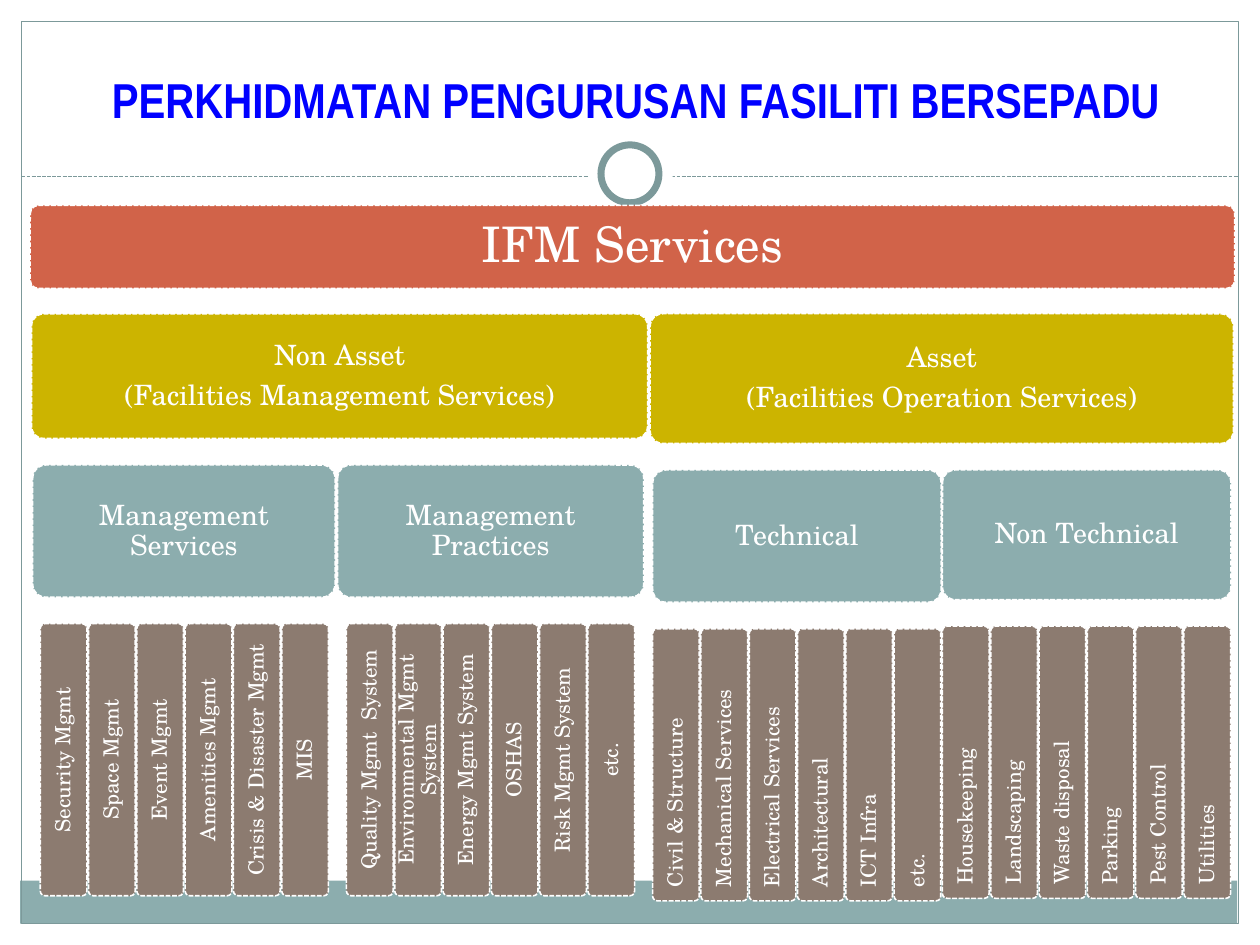
from pptx import Presentation
from pptx.dml.color import RGBColor
from pptx.enum.dml import MSO_LINE
from pptx.enum.shapes import MSO_CONNECTOR, MSO_SHAPE as SHAPE
from pptx.enum.text import MSO_ANCHOR as ANCHOR, PP_ALIGN as ALIGN
from pptx.util import Inches, Pt
from lxml import etree

COLORS = {"white": "FFFFFF", "teal": "8CADAE", "frame": "7C999A", "title": "0000FF",
          "root": "D16349", "branch": "CCB400", "leaf": "8C7B70"}
RGB = {name: RGBColor.from_string(value) for name, value in COLORS.items()}

prs = Presentation()
prs.slide_width, prs.slide_height = Inches(10), Inches(7.5)
s = prs.slides.add_slide(prs.slide_layouts[5])


def add_shape(kind, box, fill=None, line=None, width=0.75):
    sp = s.shapes.add_shape(kind, *[Inches(v) for v in box])
    sp.shadow.inherit = False
    if fill:
        sp.fill.solid()
        sp.fill.fore_color.rgb = RGB[fill]
    else:
        sp.fill.background()
    if line:
        sp.line.color.rgb = RGB[line]
        sp.line.width = Pt(width)
    else:
        sp.line.fill.background()
    return sp


def add_box(box, fill, lines, size, inset, align=ALIGN.CENTER, vertical=False):
    sp = add_shape(SHAPE.ROUNDED_RECTANGLE, box, fill, "white", 0.9)
    sp.adjustments[0] = 0.1
    sp.line.dash_style = MSO_LINE.SQUARE_DOT
    tf = sp.text_frame
    tf.word_wrap = True
    tf.vertical_anchor = ANCHOR.MIDDLE
    for side in ("left", "top", "right", "bottom"):
        setattr(tf, f"margin_{side}", Inches(inset))
    if vertical:
        tf._txBody.bodyPr.set("vert", "vert270")
    for i, line in enumerate(lines):
        p = tf.paragraphs[0] if i == 0 else tf.add_paragraph()
        for name, value in {"alignment": align, "line_spacing": 0.9,
                            "space_after": Pt(0.35 * size)}.items():
            setattr(p, name, value)
        r = p.add_run()
        r.text = line
        for name, value in {"name": "TeX Gyre Schola", "size": Pt(size)}.items():
            setattr(r.font, name, value)
        r.font.color.rgb = RGB["white"]


add_shape(SHAPE.RECTANGLE, (0.16, 6.99, 9.66, 0.34), "teal")
add_shape(SHAPE.RECTANGLE, (0.17, 0.17, 9.66, 7.16), line="frame")
rule = s.shapes.add_connector(MSO_CONNECTOR.STRAIGHT, Inches(0.17), Inches(1.4),
                              Inches(9.83), Inches(1.4))
rule.line.color.rgb = RGB["frame"]
rule.line.width = Pt(0.75)
rule.line.dash_style = MSO_LINE.SQUARE_DOT
etree.SubElement(rule._element.spPr,
                 "{http://schemas.openxmlformats.org/drawingml/2006/main}effectLst")
add_shape(SHAPE.OVAL, (4.67, 1.05, 0.67, 0.67), "white")
add_shape(SHAPE.OVAL, (4.77, 1.15, 0.46, 0.46), "white", "frame", 4)

title = s.shapes.title
for name, value in {"left": 0.28, "top": 0.42, "width": 9.53, "height": 0.65}.items():
    setattr(title, name, Inches(value))
tf = title.text_frame
tf.word_wrap = True
tf.vertical_anchor = ANCHOR.BOTTOM
p = tf.paragraphs[0]
p.alignment = ALIGN.CENTER
r = p.add_run()
r.text = "PERKHIDMATAN PENGURUSAN FASILITI BERSEPADU"
for name, value in {"name": "Arial Narrow", "size": Pt(28), "bold": True}.items():
    setattr(r.font, name, value)
r.font.color.rgb = RGB["title"]

add_box((0.24, 1.63, 9.56, 0.66), "root", ["IFM Services"], 28, 0.12)

branches = [
    ((0.25, 2.49, 4.89, 0.99), ["Non Asset", "(Facilities Management Services)"]),
    ((5.16, 2.49, 4.63, 1.03), ["Asset", "(Facilities Operation Services)"]),
]
for box, lines in branches:
    add_box(box, "branch", lines, 16, 0.07)

groups = [
    ("Management Services", (0.26, 3.69, 2.4, 1.05), 0.32, 4.95, ALIGN.CENTER,
     ["Security Mgmt", "Space Mgmt", "Event Mgmt", "Amenities Mgmt",
      "Crisis & Disaster Mgmt", "MIS"]),
    ("Management Practices", (2.68, 3.69, 2.43, 1.05), 2.75, 4.95, ALIGN.CENTER,
     ["Quality Mgmt  System", "Environmental Mgmt System", "Energy Mgmt System",
      "OSHAS", "Risk Mgmt System", "etc."]),
    ("Technical", (5.18, 3.73, 2.29, 1.05), 5.18, 4.99, ALIGN.LEFT,
     ["Civil & Structure", "Mechanical Services", "Electrical Services",
      "Architectural", "ICT Infra", "etc."]),
    ("Non Technical", (7.48, 3.73, 2.29, 1.03), 7.48, 4.97, ALIGN.LEFT,
     ["Housekeeping", "Landscaping", "Waste disposal", "Parking",
      "Pest Control", "Utilities"]),
]
leaf_step = 2.3 / 6
for name, box, left, top, align, leaves in groups:
    add_box(box, "teal", [name], 16, 0.07)
    for i, leaf in enumerate(leaves):
        add_box((left + i * leaf_step, top, 0.37, 2.16), "leaf", [leaf], 12, 0.05,
                align, vertical=True)

prs.save("out.pptx")
